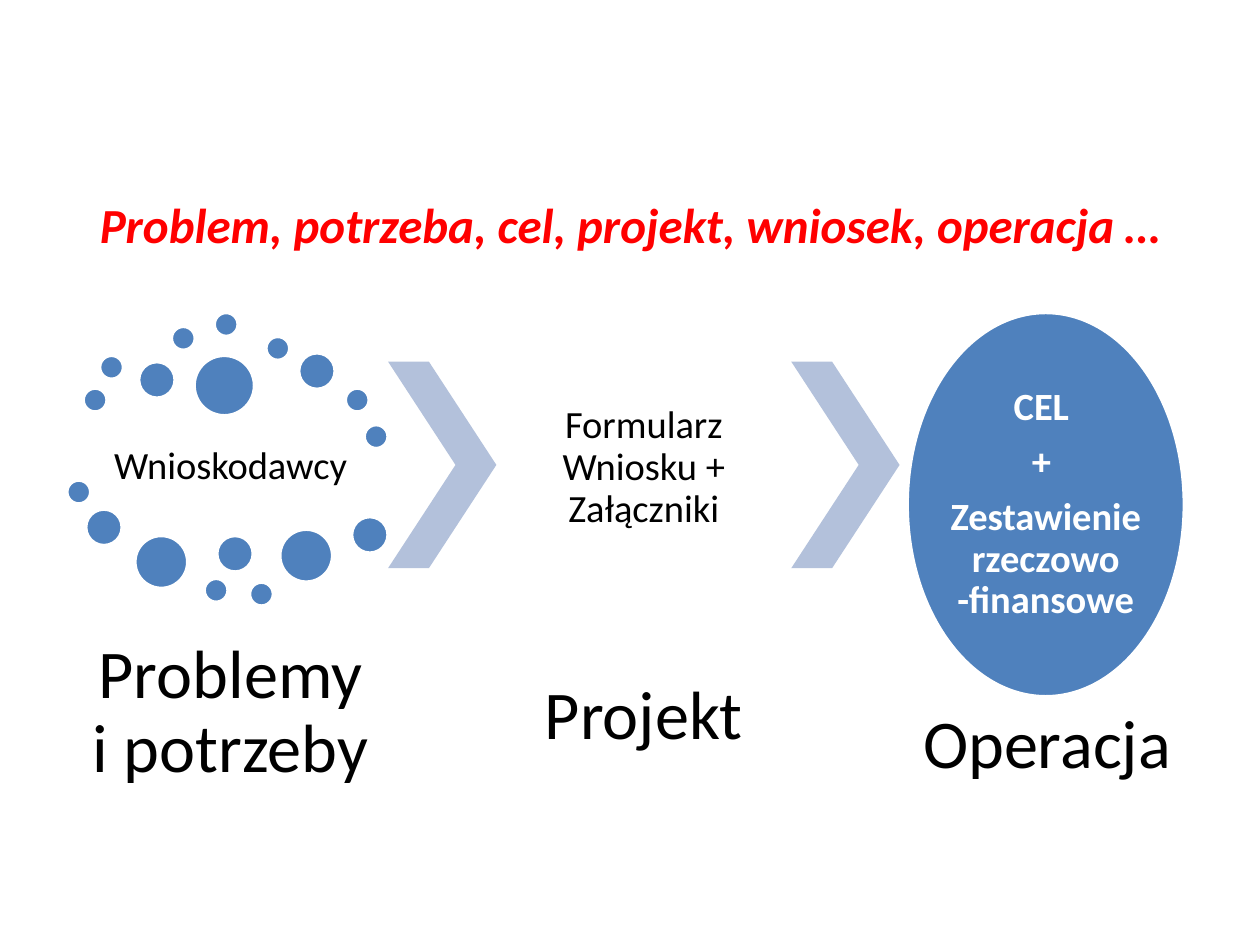
from pptx import Presentation, util as u
from pptx.dml.color import RGBColor
from pptx.enum import shapes, text

COLORS = {"accent": "4F81BD", "arrow": "B3C1DB", "title": "FF0000",
          "dark": "000000", "light": "FFFFFF"}
COLUMNS, ROWS = 100, 75


class ProcessSlide:
    font = "Calibri"
    label_size, stage_size, title_size = 22, 39, 28

    def __init__(self, deck):
        self.column = deck.slide_width / COLUMNS
        self.row = deck.slide_height / ROWS
        self.slide = deck.slides.add_slide(deck.slide_layouts[5])

    def box(self, left, top, width, height):
        return (u.Emu(round(left * self.column)), u.Emu(round(top * self.row)),
                u.Emu(round(width * self.column)), u.Emu(round(height * self.row)))

    def color(self, key):
        return RGBColor.from_string(COLORS[key])

    def set_text(self, frame, paragraphs, size, color, inset=0.03, bold=False, italic=False,
                 spacing=0.9):
        frame.word_wrap = True
        frame.auto_size = text.MSO_AUTO_SIZE.NONE
        frame.vertical_anchor = text.MSO_ANCHOR.MIDDLE
        frame.margin_left = frame.margin_right = u.Inches(inset)
        frame.margin_top = frame.margin_bottom = u.Inches(inset)
        for index, lines in enumerate(paragraphs):
            paragraph = frame.add_paragraph() if index else frame.paragraphs[0]
            paragraph.alignment = text.PP_ALIGN.CENTER
            paragraph.line_spacing = spacing
            if index < len(paragraphs) - 1:
                paragraph.space_after = u.Pt(0.35 * size)
            for number, line in enumerate(lines.split("\n")):
                if number:
                    paragraph.add_line_break()
                run = paragraph.add_run()
                run.text = line
                run.font.name = self.font
                run.font.size = u.Pt(size)
                run.font.bold = bold
                run.font.italic = italic
                run.font.color.rgb = self.color(color)

    def title(self, wording, *place):
        heading = self.slide.shapes.title
        heading.left, heading.top, heading.width, heading.height = self.box(*place)
        self.set_text(heading.text_frame, [wording], self.title_size, "title",
                      inset=0.05, bold=True, italic=True, spacing=1)

    def label(self, wording, size, inset, *place):
        caption = self.slide.shapes.add_textbox(*self.box(*place))
        self.set_text(caption.text_frame, [wording], size, "dark", inset)

    def shape(self, kind, fill, *place):
        figure = self.slide.shapes.add_shape(kind, *self.box(*place))
        figure.shadow.inherit = False
        figure.fill.solid()
        figure.fill.fore_color.rgb = self.color(fill)
        figure.line.fill.background()
        return figure

    def ellipse(self, *place):
        oval = self.shape(shapes.MSO_SHAPE.OVAL, "accent", *place)
        oval.line.color.rgb = self.color("light")
        oval.line.width = u.Pt(2)
        return oval

    def chevron(self, left):
        arrow = self.shape(shapes.MSO_SHAPE.CHEVRON, "arrow", left, 28.7, 8.6, 16.4)
        arrow.adjustments[0] = 0.623

    def stage(self, wording, left, top):
        self.label(wording, self.stage_size, 0.05, left, top, 23.4, 14.4)


APPLICANT_DOTS = {
    1.9: [(6.6, 30.8), (7.9, 28.2), (13.6, 25.9), (17, 24.8), (21.1, 26.7),
          (27.4, 30.8), (28.9, 33.7), (5.3, 38.1), (16.2, 45.9), (19.8, 46.2)],
    2.9: [(11, 28.7), (23.7, 28), (6.8, 40.4), (17.2, 42.5), (27.9, 41)],
    4.2: [(10.7, 42.5), (22.2, 42)],
    4.8: [(15.4, 28.2)],
}


def main():
    deck = Presentation()
    deck.slide_width, deck.slide_height = u.Inches(10), u.Inches(7.5)
    page = ProcessSlide(deck)
    page.title("Problem, potrzeba, cel, projekt, wniosek, operacja …", 5, 11.5, 90, 12.5)

    page.label("Wnioskodawcy", page.label_size, 0.03, 6.6, 33.2, 23.4, 7.7)
    page.stage("Problemy i potrzeby", 6.6, 49.4)
    for diameter, corners in APPLICANT_DOTS.items():
        for left, top in corners:
            page.ellipse(left, top, diameter, diameter)

    page.chevron(30.8)
    page.label("Formularz Wniosku + Załączniki", page.label_size, 0.03, 39.4, 24.8, 23.4, 24.7)
    page.stage("Projekt", 39.4, 49.7)

    page.chevron(62.8)
    goal = page.ellipse(72, 24.8, 22, 30.5)
    page.set_text(goal.text_frame, ["CEL ", "+ ", "Zestawienie rzeczowo\n-finansowe"],
                  page.label_size, "light", inset=0, bold=True)
    page.stage("Operacja", 71.4, 52)

    deck.save("out.pptx")


if __name__ == "__main__":
    main()
